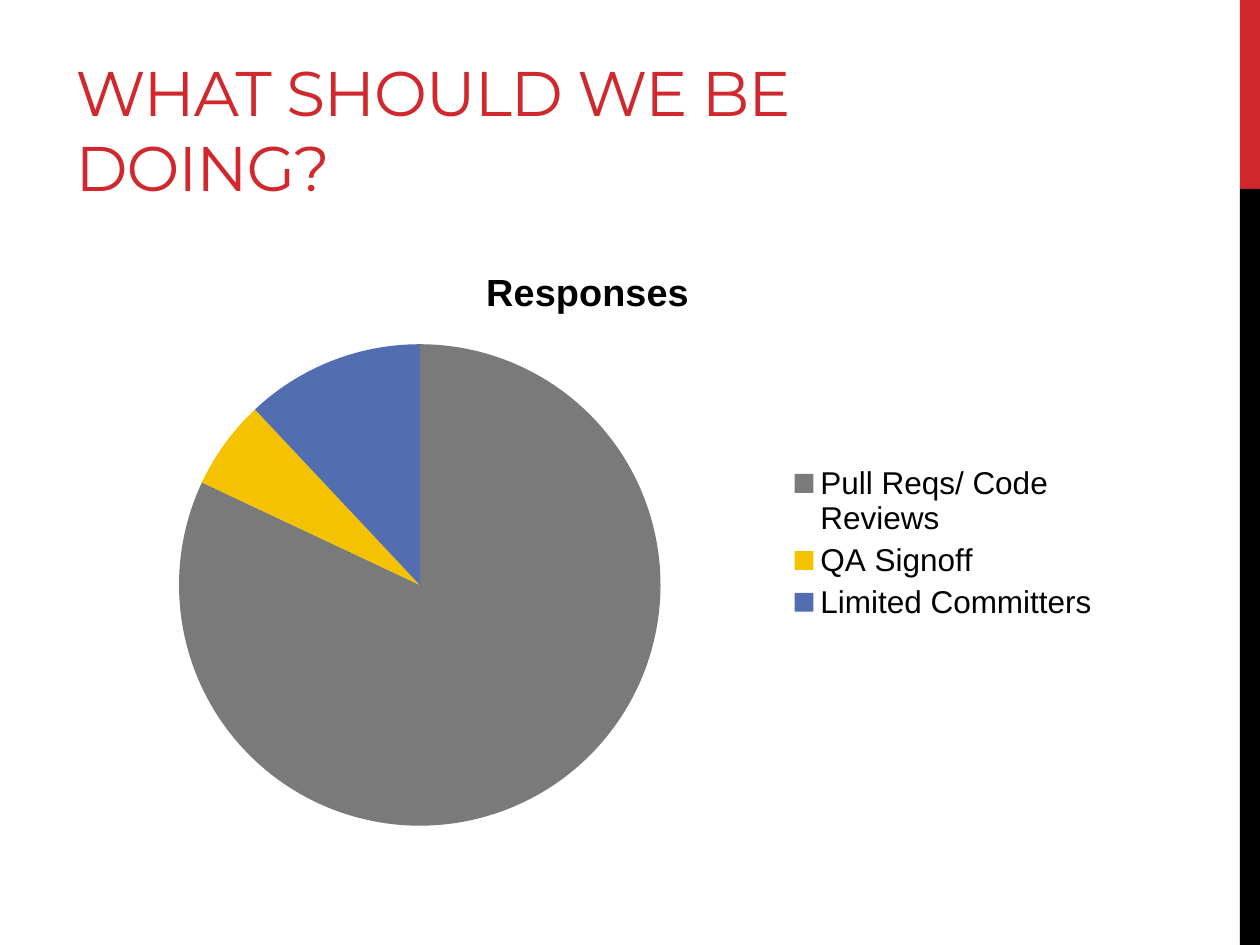
from dataclasses import dataclass

from lxml import etree
from pptx import Presentation
from pptx import util as u
from pptx.chart.data import CategoryChartData
from pptx.dml.color import RGBColor
from pptx.enum import chart as ch, shapes, text
from pptx.oxml.ns import qn

WIDTH, HEIGHT = u.Inches(10), u.Inches(7.5)
RED, BLACK = "D1282E", "000000"


@dataclass
class Box:
    x: float
    y: float
    w: float
    h: float

    def lengths(self) -> tuple[int, int, int, int]:
        return (int(self.x * WIDTH), int(self.y * HEIGHT),
                int(self.w * WIDTH), int(self.h * HEIGHT))


@dataclass
class Bar:
    box: Box
    color: str


@dataclass
class Slice:
    label: str
    value: int
    color: str


BARS = [
    Bar(Box(0.984, 0, 0.016, 0.2), RED),
    Bar(Box(0.984, 0.2, 0.016, 0.8), BLACK),
]
SLICES = [
    Slice("Pull Reqs/ Code Reviews", 82, "7A7A7A"),
    Slice("QA Signoff", 6, "F5C201"),
    Slice("Limited Committers", 12, "526DB0"),
]
TITLE_BOX = Box(0.05, 0.023, 0.633, 0.2)
CHART_BOX = Box(0.05, 0.256, 0.833, 0.637)
PIE_AREA = {"x": 0.11, "y": 0.17, "w": 0.46, "h": 0.8}


def rgb(color: str) -> RGBColor:
    return RGBColor.from_string(color)


def paint(fmt, color: str) -> None:
    fmt.fill.solid()
    fmt.fill.fore_color.rgb = rgb(color)


def style(font, name: str, size: float, color: str, bold: bool = False) -> None:
    font.name, font.size, font.bold = name, u.Pt(size), bold
    font.color.rgb = rgb(color)


def draw_bar(s, bar: Bar) -> None:
    sp = s.shapes.add_shape(shapes.MSO_SHAPE.RECTANGLE, *bar.box.lengths())
    sp.shadow.inherit = False
    paint(sp, bar.color)
    sp.line.fill.background()


def draw_title(s, words: str, box: Box) -> None:
    sp = s.shapes.title
    sp.left, sp.top, sp.width, sp.height = box.lengths()
    tf = sp.text_frame
    tf.word_wrap = True
    tf.auto_size = text.MSO_AUTO_SIZE.NONE
    tf.vertical_anchor = text.MSO_ANCHOR.BOTTOM
    p = tf.paragraphs[0]
    p.alignment = text.PP_ALIGN.LEFT
    r = p.add_run()
    r.text = words
    style(r.font, "Montserrat", 36, RED)
    r.font._element.set("spc", "-60")


def place_plot(chart, area: dict[str, float]) -> None:
    plot_area = chart._chartSpace.chart.plotArea
    for old in plot_area.findall(qn("c:layout")):
        plot_area.remove(old)
    layout = etree.Element(qn("c:layout"))
    plot_area.insert(0, layout)
    manual = etree.SubElement(layout, qn("c:manualLayout"))
    settings = {"layoutTarget": "inner", "xMode": "edge", "yMode": "edge", **area}
    for tag, value in settings.items():
        etree.SubElement(manual, qn(f"c:{tag}")).set("val", str(value))


def draw_pie(s, name: str, slices: list[Slice], box: Box) -> None:
    data = CategoryChartData()
    data.categories = [item.label for item in slices]
    data.add_series(name, [item.value for item in slices])
    chart = s.shapes.add_chart(ch.XL_CHART_TYPE.PIE, *box.lengths(), data).chart
    style(chart.font, "Arial", 18, BLACK)
    chart.has_title = True
    r = chart.chart_title.text_frame.paragraphs[0].add_run()
    r.text = name
    style(r.font, "Arial", 21.6, BLACK, bold=True)
    chart.chart_title.include_in_layout = False
    chart.has_legend = True
    chart.legend.position = ch.XL_LEGEND_POSITION.RIGHT
    chart.legend.include_in_layout = False
    plot = chart.plots[0]
    plot.vary_by_categories = True
    for i, item in enumerate(slices):
        paint(plot.series[0].points[i].format, item.color)
    place_plot(chart, PIE_AREA)


def main() -> None:
    prs = Presentation()
    prs.slide_width, prs.slide_height = WIDTH, HEIGHT
    s = prs.slides.add_slide(prs.slide_layouts[5])
    for bar in BARS:
        draw_bar(s, bar)
    draw_title(s, "WHAT SHOULD WE BE DOING?", TITLE_BOX)
    draw_pie(s, "Responses", SLICES, CHART_BOX)
    prs.save("out.pptx")


if __name__ == "__main__":
    main()
